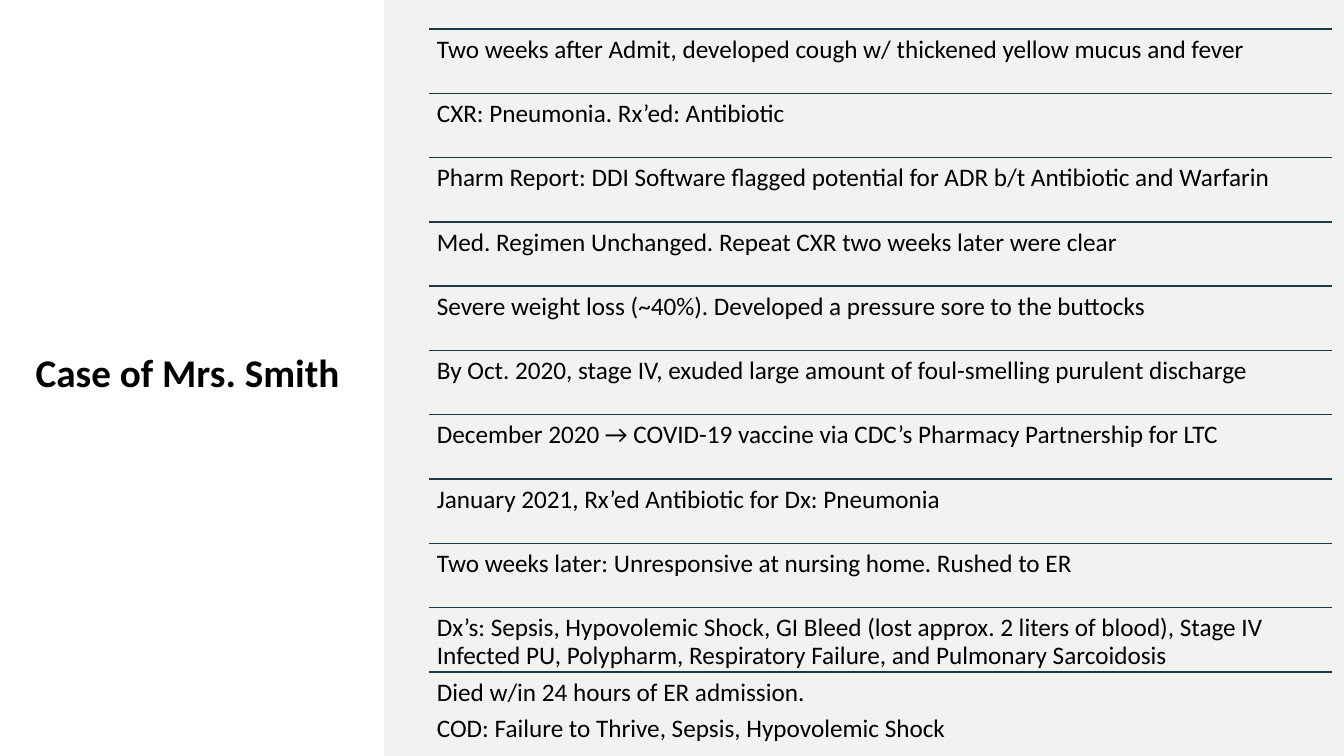
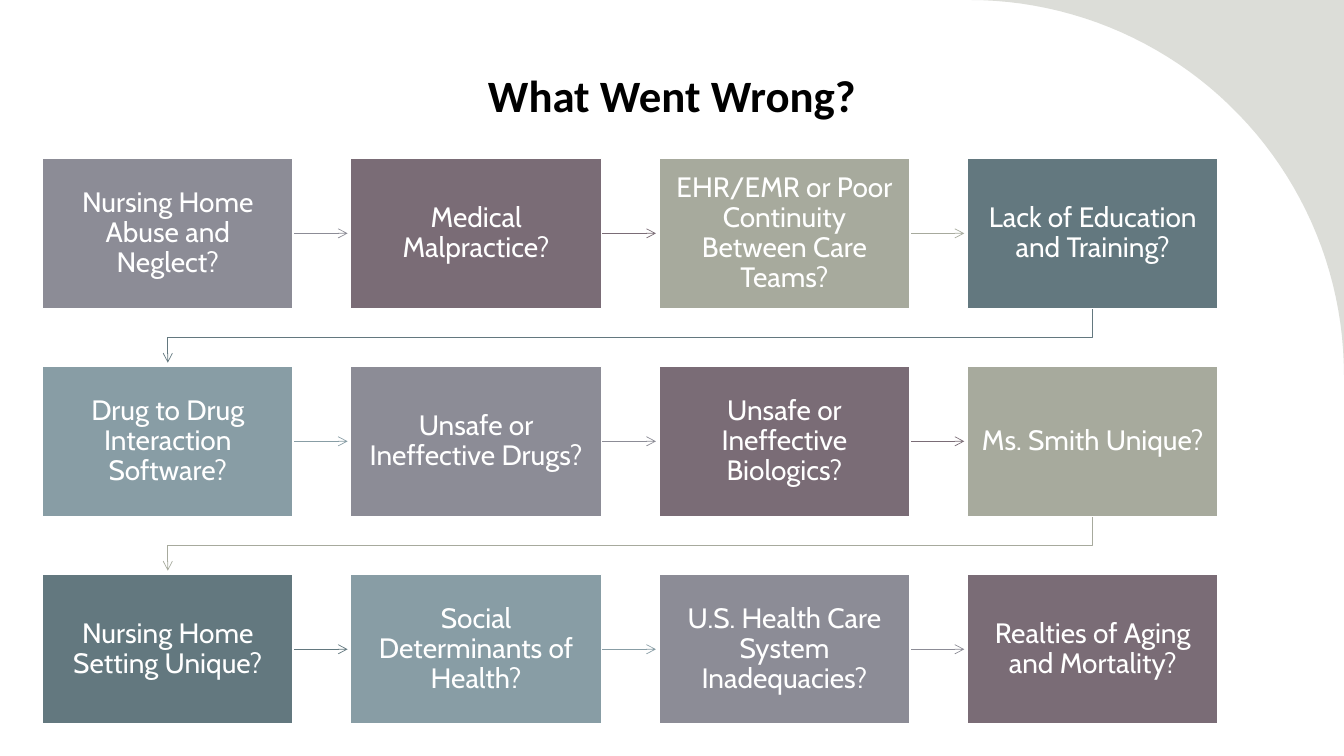
"""Build two case-study slides: a ruled timeline and a snaking chain of causes."""
import math

from lxml import etree
from pptx import Presentation
from pptx import util as u
from pptx.dml.color import RGBColor
from pptx.enum import shapes, text
from pptx.oxml.ns import qn

WIDTH, HEIGHT = u.Cm(33.87), u.Cm(19.05)
BLACK, WHITE, RULE, PANEL, CORNER = "000000", "FFFFFF", "1B3843", "F2F3F1", "DCDDD8"
BOX_COLOURS = ["8C8C96", "7A6C76", "A7AA9D", "63787F", "889DA5"]

EVENTS = [
    ["Two weeks after Admit, developed cough w/ thickened yellow mucus and fever"],
    ["CXR: Pneumonia. Rx’ed: Antibiotic"],
    ["Pharm Report: DDI Software flagged potential for ADR b/t Antibiotic and Warfarin"],
    ["Med. Regimen Unchanged. Repeat CXR two weeks later were clear"],
    ["Severe weight loss (~40%). Developed a pressure sore to the buttocks"],
    ["By Oct. 2020, stage IV, exuded large amount of foul-smelling purulent discharge"],
    ["December 2020 → COVID-19 vaccine via CDC’s Pharmacy Partnership for LTC"],
    ["January 2021, Rx’ed Antibiotic for Dx: Pneumonia"],
    ["Two weeks later: Unresponsive at nursing home. Rushed to ER"],
    ["Dx’s: Sepsis, Hypovolemic Shock, GI Bleed (lost approx. 2 liters of blood), "
     "Stage IV Infected PU, Polypharm, Respiratory Failure, and Pulmonary Sarcoidosis"],
    ["Died w/in 24 hours of ER admission.",
     "COD: Failure to Thrive, Sepsis, Hypovolemic Shock"],
]
CAUSES = [
    "Nursing Home Abuse and Neglect?",
    "Medical Malpractice?",
    "EHR/EMR or Poor Continuity Between Care Teams?",
    "Lack of Education and Training?",
    "Drug to Drug Interaction Software?",
    "Unsafe or Ineffective Drugs?",
    "Unsafe or Ineffective Biologics?",
    "Ms. Smith Unique?",
    "Nursing Home Setting Unique?",
    "Social Determinants of Health?",
    "U.S. Health Care System Inadequacies?",
    "Realties of Aging and Mortality?",
]


def rgb(value):
    return RGBColor.from_string(value)


def write(tf, lines, size, font, colour, align, spacing, after=0, bold=False):
    tf.word_wrap = True
    tf.auto_size = text.MSO_AUTO_SIZE.NONE
    for i, line in enumerate(lines):
        p = tf.paragraphs[0] if i == 0 else tf.add_paragraph()
        p.alignment, p.line_spacing = align, spacing
        p.space_before, p.space_after = u.Pt(0), u.Pt(after)
        r = p.add_run()
        r.text = line
        r.font.size, r.font.name, r.font.bold = u.Pt(size), font, bold
        r.font.color.rgb = rgb(colour)


def set_insets(tf, x, y):
    tf.margin_left = tf.margin_right = u.Cm(x)
    tf.margin_top = tf.margin_bottom = u.Cm(y)


def add_slide(prs, title, top, width, height, size):
    s = prs.slides.add_slide(prs.slide_layouts[5])
    sp = s.shapes.title
    sp.left, sp.top, sp.width, sp.height = 0, u.Cm(top), width, u.Cm(height)
    sp.text_frame.vertical_anchor = text.MSO_ANCHOR.BOTTOM
    write(sp.text_frame, [title], size, "Calibri", BLACK, text.PP_ALIGN.CENTER, 1.1, bold=True)
    return s


def paint(sp, fill, line=None):
    sp.shadow.inherit = False
    sp.fill.solid()
    sp.fill.fore_color.rgb = rgb(fill)
    if line:
        sp.line.color.rgb, sp.line.width = rgb(line), u.Pt(1)
    else:
        sp.line.fill.background()


def add_line(s, x1, y1, x2, y2, colour, width):
    sp = s.shapes.add_connector(shapes.MSO_CONNECTOR.STRAIGHT, x1, y1, x2, y2)
    sp.line.color.rgb, sp.line.width = rgb(colour), u.Pt(width)
    etree.SubElement(sp._element.spPr, qn("a:effectLst"))
    return sp


def add_outline(s, points, close):
    builder = s.shapes.build_freeform(*points[0], scale=1.0)
    builder.add_line_segments(points[1:], close=close)
    return builder.convert_to_shape()


def add_arrowhead(sp):
    etree.SubElement(sp.line._get_or_add_ln(), qn("a:tailEnd"), type="arrow")


def build_timeline(prs):
    panel_left = u.Cm(9.68)
    s = add_slide(prs, "Case of Mrs. Smith", 7.24, u.Cm(9.45), 2.84, 28)
    panel = s.shapes.add_shape(shapes.MSO_SHAPE.RECTANGLE, panel_left, 0,
                               WIDTH - panel_left, HEIGHT)
    paint(panel, PANEL)
    left, width, pitch = u.Cm(10.82), u.Cm(22.76), u.Cm(1.62)
    for i, lines in enumerate(EVENTS):
        top = u.Cm(0.73) + i * pitch
        add_line(s, left, top, left + width, top, RULE, 1)
        tf = s.shapes.add_textbox(left, top, width, pitch).text_frame
        set_insets(tf, 0.19, 0.19)
        write(tf, lines, 18, "Calibri", BLACK, text.PP_ALIGN.LEFT, 0.9, after=6.5)


def build_causes(prs):
    s = add_slide(prs, "What Went Wrong?", 1.52, WIDTH, 1.68, 32)
    radius = u.Cm(9.45)
    angles = [math.radians(a) for a in range(0, 91, 2)]
    arc = [(round(WIDTH - radius + radius * math.cos(a)),
            round(radius - radius * math.sin(a))) for a in angles]
    paint(add_outline(s, [(WIDTH, 0)] + arc, True), CORNER)

    columns, box_w, box_h = 4, u.Cm(6.32), u.Cm(3.78)
    left, top, pitch_x, pitch_y = u.Cm(1.07), u.Cm(3.99), u.Cm(7.77), u.Cm(5.24)
    reach, bend = u.Cm(1.37), u.Cm(0.73)
    for i, cause in enumerate(CAUSES):
        row, column = divmod(i, columns)
        x, y = left + column * pitch_x, top + row * pitch_y
        colour = BOX_COLOURS[i % len(BOX_COLOURS)]
        if column < columns - 1:
            middle = y + box_h // 2
            add_arrowhead(add_line(s, x + box_w, middle, x + box_w + reach, middle, colour, 0.5))
        elif i < len(CAUSES) - 1:
            start, end, bottom = x + box_w // 2, left + box_w // 2, y + box_h
            sp = add_outline(s, [(start, bottom), (start, bottom + bend),
                                 (end, bottom + bend), (end, bottom + reach)], False)
            sp.shadow.inherit = False
            sp.fill.background()
            sp.line.color.rgb, sp.line.width = rgb(colour), u.Pt(0.5)
            add_arrowhead(sp)
        box = s.shapes.add_shape(shapes.MSO_SHAPE.RECTANGLE, x, y, box_w, box_h)
        paint(box, colour, WHITE)
        box.text_frame.vertical_anchor = text.MSO_ANCHOR.MIDDLE
        set_insets(box.text_frame, 0.3, 0.33)
        write(box.text_frame, [cause], 20, "Cabin", WHITE, text.PP_ALIGN.CENTER, 0.9)


def main():
    prs = Presentation()
    prs.slide_width, prs.slide_height = WIDTH, HEIGHT
    build_timeline(prs)
    build_causes(prs)
    prs.save("out.pptx")


if __name__ == "__main__":
    main()
